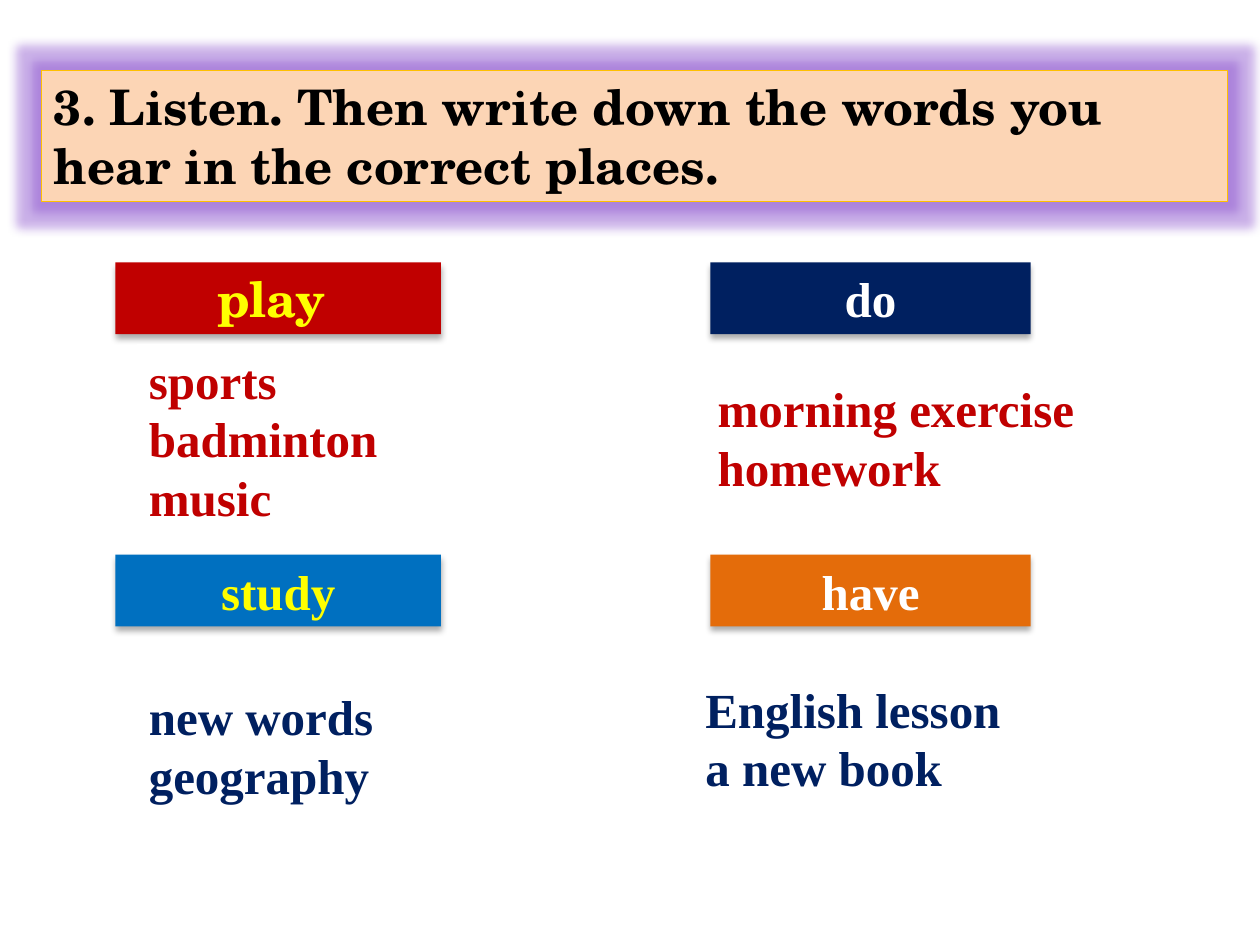
from dataclasses import dataclass

from lxml import etree
from pptx import Presentation
from pptx.dml.color import RGBColor
from pptx.enum import shapes, text
from pptx.oxml import ns
from pptx.util import Pt


@dataclass(frozen=True)
class Theme:
    size: float = 28
    serif: str = "Times New Roman"
    display: str = "TeX Gyre Schola"
    black: str = "000000"
    white: str = "FFFFFF"
    yellow: str = "FFFF00"
    gold: str = "FFC000"
    peach: str = "FCD5B5"
    red: str = "C00000"
    navy: str = "002060"
    blue: str = "0070C0"
    orange: str = "E46C0A"
    glow: str = "7F3FC8"


THEME = Theme()


@dataclass(frozen=True)
class Panel:
    left: float
    top: float
    width: float
    height: float
    lines: tuple[str, ...]
    fill: str
    color: str
    font: str = THEME.serif
    align: text.PP_ALIGN = text.PP_ALIGN.LEFT
    anchor: text.MSO_ANCHOR = text.MSO_ANCHOR.TOP


def add_effect(box, name: str, color: str, opacity: int, **attributes) -> None:
    """Put one coloured effect on a shape."""
    effects = box._element.spPr.find(ns.qn("a:effectLst"))
    effect = etree.SubElement(effects, ns.qn(f"a:{name}"),
                              {key: str(value) for key, value in attributes.items()})
    paint = etree.SubElement(effect, ns.qn("a:srgbClr"), val=color)
    etree.SubElement(paint, ns.qn("a:alpha"), val=str(opacity * 1000))


def add_panel(page, panel: Panel):
    """Draw a filled rectangle with one paragraph for each line."""
    box = page.shapes.add_shape(
        shapes.MSO_SHAPE.RECTANGLE,
        Pt(panel.left), Pt(panel.top), Pt(panel.width), Pt(panel.height))
    box.shadow.inherit = False
    box.fill.solid()
    box.fill.fore_color.rgb = RGBColor.from_string(panel.fill)
    box.line.fill.background()
    frame = box.text_frame
    frame.word_wrap = True
    frame.vertical_anchor = panel.anchor
    frame.text = "\n".join(panel.lines)
    for para in frame.paragraphs:
        para.alignment = panel.align
        para.font.name = panel.font
        para.font.size = Pt(THEME.size)
        para.font.bold = True
        para.font.color.rgb = RGBColor.from_string(panel.color)
    return box


def add_title(page) -> None:
    """Draw the task banner with its border and glow."""
    box = add_panel(page, Panel(
        23.75, 40.25, 677.5, 75,
        ("3. Listen. Then write down the words you hear in the correct places.",),
        THEME.peach, THEME.black, THEME.display))
    box.line.color.rgb = RGBColor.from_string(THEME.gold)
    box.line.width = Pt(0.75)
    add_effect(box, "glow", THEME.glow, 40, rad=Pt(11))


def add_heading(page, column: tuple[float, float], top: float, word: str,
                fill: str, color: str, font: str = THEME.serif) -> None:
    """Draw a verb heading with a soft shadow below."""
    left, width = column
    box = add_panel(page, Panel(
        left, top, width, 41, (word,), fill, color, font,
        text.PP_ALIGN.CENTER, text.MSO_ANCHOR.MIDDLE))
    add_effect(box, "outerShdw", THEME.black, 32, blurRad=Pt(3.5),
               dist=Pt(2.2), dir=90 * 60000, rotWithShape=0)


def add_answer(page, left: float, top: float, width: float, height: float,
               color: str, *lines: str) -> None:
    """Draw the words that belong to a verb."""
    add_panel(page, Panel(left, top, width, height, lines, THEME.white, color))


def main() -> None:
    deck = Presentation()
    deck.slide_width, deck.slide_height = Pt(720), Pt(540)
    page = deck.slides.add_slide(deck.slide_layouts[6])

    add_title(page)

    # Verb headings on a two by two grid
    left_column, right_column = (66, 186), (406, 183)
    upper, lower = 150, 317
    add_heading(page, left_column, upper, "play ", THEME.red, THEME.yellow, THEME.display)
    add_heading(page, right_column, upper, "do", THEME.navy, THEME.white)
    add_heading(page, left_column, lower, "study", THEME.blue, THEME.yellow)
    add_heading(page, right_column, lower, "have", THEME.orange, THEME.white)

    # Words under each verb
    add_answer(page, 78, 196.5, 162, 109, THEME.red, "sports", "badminton", "music")
    add_answer(page, 403, 213, 281, 75, THEME.red, "morning exercise", "homework")
    add_answer(page, 78, 389, 180, 75, THEME.navy, "new words", "geography")
    add_answer(page, 396, 384.5, 248.5, 109, THEME.navy, "English lesson", "a new book")

    deck.save("out.pptx")


if __name__ == "__main__":
    main()
